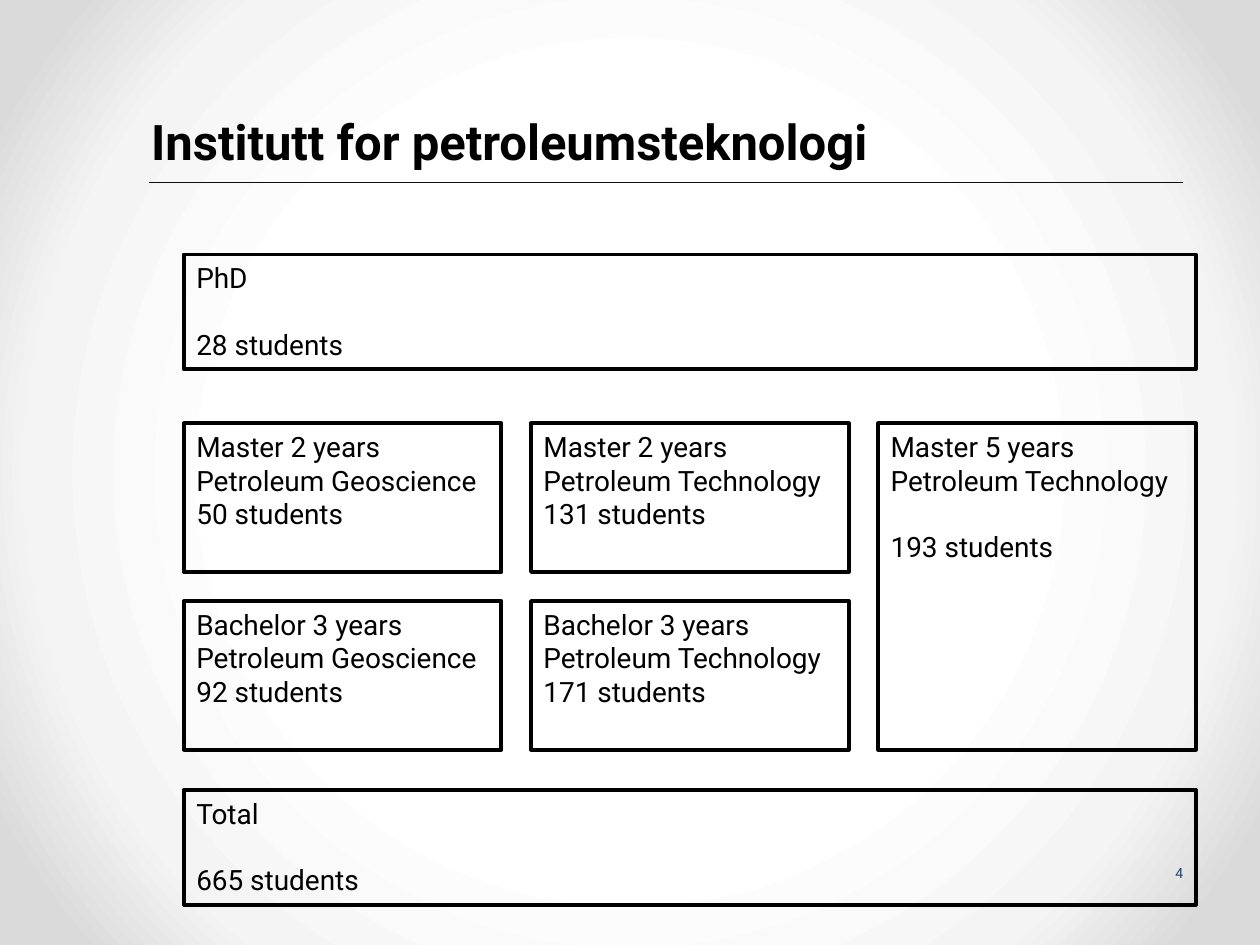
from dataclasses import dataclass

from pptx import Presentation
from pptx.dml.color import RGBColor as Rgb
from pptx.enum.shapes import MSO_CONNECTOR as Connector, MSO_SHAPE as Shape
from pptx.enum.text import MSO_ANCHOR as Anchor, MSO_AUTO_SIZE as AutoSize, PP_ALIGN as Align
from pptx.oxml import parse_xml
from pptx.oxml.ns import nsdecls, qn
from pptx.util import Inches, Pt


@dataclass(frozen=True)
class Theme:
    font: str = "Roboto"
    ink: str = "000000"
    rule: str = "0D0D0D"
    number: str = "194377"
    backdrop: tuple = ((50, "FFFFFF"), (76, "F4F4F4"), (92, "DADADA"))
    title_size: float = 28
    body_size: float = 16
    number_size: float = 8
    line_height: float = 18.75


def write_text(frame, paragraphs, *, font, size, color, bold=False, align=Align.LEFT,
               anchor=Anchor.TOP, inset=(0.1, 0.05), gap=0):
    """Fill a text frame; gap is the space in points before later paragraphs."""
    frame.word_wrap = True
    frame.auto_size = AutoSize.NONE
    frame.vertical_anchor = anchor
    frame.margin_left = frame.margin_right = Inches(inset[0])
    frame.margin_top = frame.margin_bottom = Inches(inset[1])
    for index, text in enumerate(paragraphs):
        paragraph = frame.add_paragraph() if index else frame.paragraphs[0]
        paragraph.alignment = align
        if index:
            paragraph.space_before = Pt(gap)
        run = paragraph.add_run()
        run.text = text
        run.font.name, run.font.size, run.font.bold = font, Pt(size), bold
        run.font.color.rgb = Rgb.from_string(color)


class SlideBuilder:
    def __init__(self, slide, theme):
        self.slide, self.theme = slide, theme

    def backdrop(self):
        self.slide.background.fill.gradient()
        gradient = next(self.slide.element.iter(qn("a:gradFill")))
        stops = "".join(f'<a:gs pos="{position * 1000}"><a:srgbClr val="{color}"/></a:gs>'
                        for position, color in self.theme.backdrop)
        radial = parse_xml(
            f'<a:gradFill {nsdecls("a")} rotWithShape="1"><a:gsLst>{stops}</a:gsLst>'
            '<a:path path="circle"><a:fillToRect l="50000" t="50000" r="50000" b="50000"/>'
            '</a:path></a:gradFill>')
        gradient.getparent().replace(gradient, radial)

    def title(self, text, left, top, width, height):
        title = self.slide.shapes.title
        title.left, title.top = Inches(left), Inches(top)
        title.width, title.height = Inches(width), Inches(height)
        write_text(title.text_frame, [text], font=self.theme.font, size=self.theme.title_size,
                   color=self.theme.ink, bold=True, anchor=Anchor.BOTTOM, inset=(0, 0))

    def rule(self, left, right, y):
        rule = self.slide.shapes.add_connector(
            Connector.STRAIGHT, Inches(left), Inches(y), Inches(right), Inches(y))
        rule.line.color.rgb = Rgb.from_string(self.theme.rule)
        rule.line.width = Pt(0.25)
        rule.element.spPr.append(parse_xml(f'<a:effectLst {nsdecls("a")}/>'))

    def page_number(self, text, left, top, width, height):
        number = self.slide.shapes.add_textbox(
            Inches(left), Inches(top), Inches(width), Inches(height))
        write_text(number.text_frame, [text], font=self.theme.font, size=self.theme.number_size,
                   color=self.theme.number, align=Align.RIGHT, inset=(0, 0))

    def box(self, paragraphs, left, top, width, height, gap=0):
        box = self.slide.shapes.add_shape(
            Shape.RECTANGLE, Inches(left), Inches(top), Inches(width), Inches(height))
        box.shadow.inherit = False
        box.fill.background()
        box.line.color.rgb = Rgb.from_string(self.theme.ink)
        box.line.width = Pt(2.25)
        write_text(box.text_frame, paragraphs, font=self.theme.font, size=self.theme.body_size,
                   color=self.theme.ink, gap=gap)


def main():
    deck = Presentation()
    deck.slide_width, deck.slide_height = Inches(10), Inches(7.5)
    theme = Theme()
    page = SlideBuilder(deck.slides.add_slide(deck.slide_layouts[5]), theme)

    # Heading and page furniture
    page.backdrop()
    page.title("Institutt for petroleumsteknologi", 1.2, 0.12, 8.21, 1.23)
    page.rule(1.18, 9.39, 1.45)
    page.page_number("4", 8.97, 6.86, 0.42, 0.13)

    # Programme grid: one row per degree, one column per field
    left, column_step, column_width = 1.46, 2.755, 2.52
    master_top, row_step, row_height = 3.36, 1.41, 1.18
    fields = ("Petroleum Geoscience", "Petroleum Technology")
    degrees = (("Master 2 years", (50, 131)), ("Bachelor 3 years", (92, 171)))
    for row, (degree, counts) in enumerate(degrees):
        for column, (field, count) in enumerate(zip(fields, counts)):
            page.box([f"{degree} {field}", f"{count} students"],
                     left + column * column_step, master_top + row * row_step,
                     column_width, row_height)

    # Five-year master spans both rows
    page.box(["Master 5 years Petroleum Technology", "193 students"],
             left + 2 * column_step, master_top, column_width, row_step + row_height,
             gap=theme.line_height)

    # Full-width bands above and below the grid
    band_width = 2 * column_step + column_width
    for label, count, top in (("PhD", 28, 2.02), ("Total", 665, 6.27)):
        page.box([label, f"{count} students"], left, top, band_width, 0.91,
                 gap=theme.line_height)

    deck.save("out.pptx")


if __name__ == "__main__":
    main()
